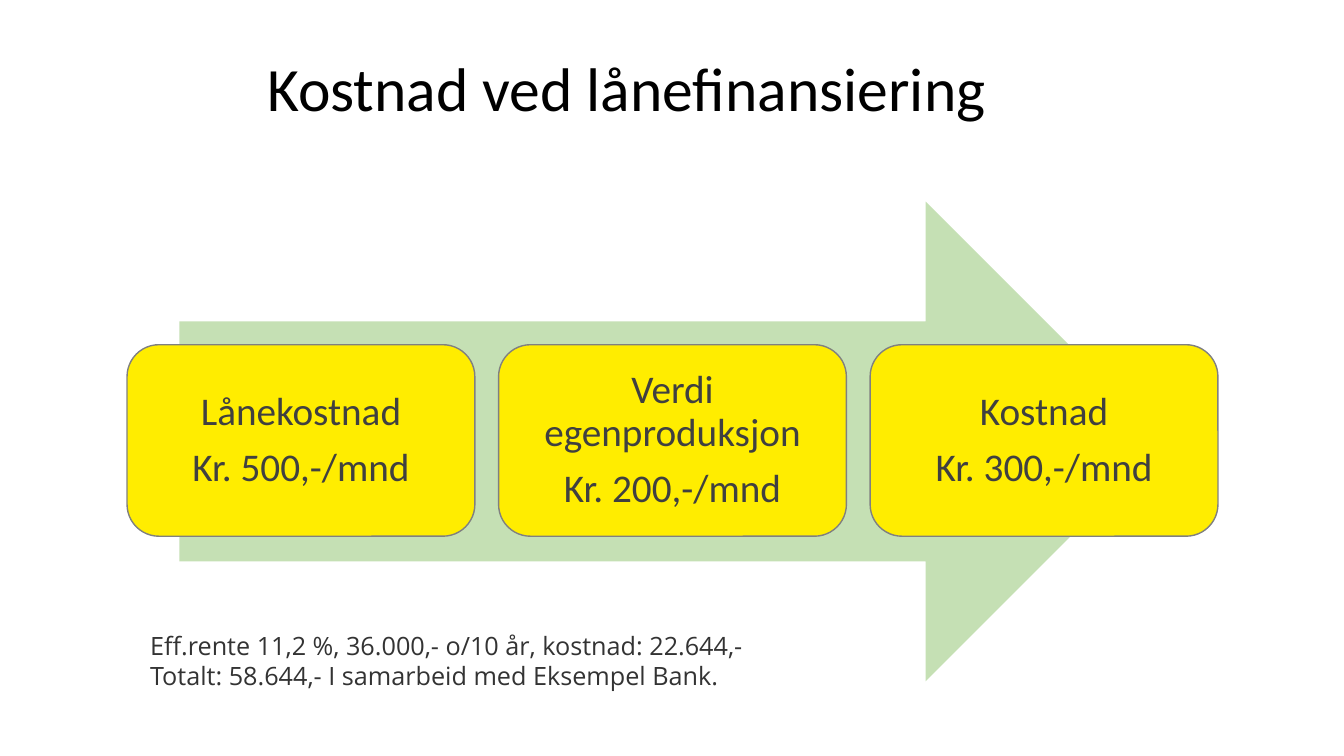
from pptx import Presentation
from pptx.dml.color import RGBColor
from pptx.enum.shapes import MSO_SHAPE
from pptx.enum.text import MSO_ANCHOR, MSO_AUTO_SIZE, PP_ALIGN
from pptx.util import Inches, Pt

ARROW = MSO_SHAPE.RIGHT_ARROW
ROUND = MSO_SHAPE.ROUNDED_RECTANGLE
MIDDLE = MSO_ANCHOR.MIDDLE
GROW = MSO_AUTO_SIZE.SHAPE_TO_FIT_TEXT
LEFT, CENTER = PP_ALIGN.LEFT, PP_ALIGN.CENTER

TITLE = "Kostnad ved lånefinansiering"
STEPS = [
    ("Lånekostnad", "Kr. 500,-/mnd"),
    ("Verdi egenproduksjon", "Kr. 200,-/mnd"),
    ("Kostnad", "Kr. 300,-/mnd"),
]
NOTE = (
    "Eff.rente 11,2 %, 36.000,- o/10 år, kostnad: 22.644,- "
    "Totalt: 58.644,- I samarbeid med Eksempel Bank."
)


class Theme:
    arrow = "C5E0B4"
    card = "FFED00"
    edge = "808080"
    title = ("Calibri", 44, "000000")
    step = ("Calibri", 28, "404040")
    note = ("Open Sans", 18, "333333")


def place(shape, left, top, width, height):
    shape.left, shape.top = Inches(left), Inches(top)
    shape.width, shape.height = Inches(width), Inches(height)


def write(par, text, style, align=LEFT):
    par.alignment = align
    run = par.add_run()
    run.text = text
    face, size, color = style
    run.font.name = face
    run.font.size = Pt(size)
    run.font.color.rgb = RGBColor.from_string(color)


def draw(slide, kind, box, fill, edge=None):
    shape = slide.shapes.add_shape(kind, *map(Inches, box))
    shape.shadow.inherit = False
    shape.fill.solid()
    shape.fill.fore_color.rgb = RGBColor.from_string(fill)
    if edge:
        shape.line.color.rgb = RGBColor.from_string(edge)
        shape.line.width = Pt(1)
    else:
        shape.line.fill.background()
    return shape


def add_step(slide, lines, left):
    card = draw(slide, ROUND, (left, 3.42, 3.45, 1.9), Theme.card, Theme.edge)
    frame = card.text_frame
    frame.word_wrap = True
    frame.vertical_anchor = MIDDLE
    frame.margin_left = frame.margin_right = Inches(0.12)
    frame.margin_top = frame.margin_bottom = Inches(0.12)
    for i, line in enumerate(lines):
        par = frame.add_paragraph() if i else frame.paragraphs[0]
        par.line_spacing = 0.9
        par.space_after = Pt(9.8)
        write(par, line, Theme.step, CENTER)


def main():
    deck = Presentation()
    deck.slide_width, deck.slide_height = Inches(13.33), Inches(7.5)
    slide = deck.slides.add_slide(deck.slide_layouts[5])

    title = slide.shapes.title
    place(title, 2.55, 0.18, 10.78, 1.45)
    title.text_frame.vertical_anchor = MIDDLE
    par = title.text_frame.paragraphs[0]
    par.line_spacing = 0.9
    write(par, TITLE, Theme.title)

    draw(slide, ARROW, (1.78, 2, 9.78, 4.76), Theme.arrow)
    start, pitch = 1.26, 3.685
    for i, lines in enumerate(STEPS):
        add_step(slide, lines, start + i * pitch)

    note = slide.shapes.add_textbox(*map(Inches, (1.39, 6.2, 6.67, 0.71)))
    note.text_frame.word_wrap = True
    note.text_frame.auto_size = GROW
    write(note.text_frame.paragraphs[0], NOTE, Theme.note)

    deck.save("out.pptx")


if __name__ == "__main__":
    main()
